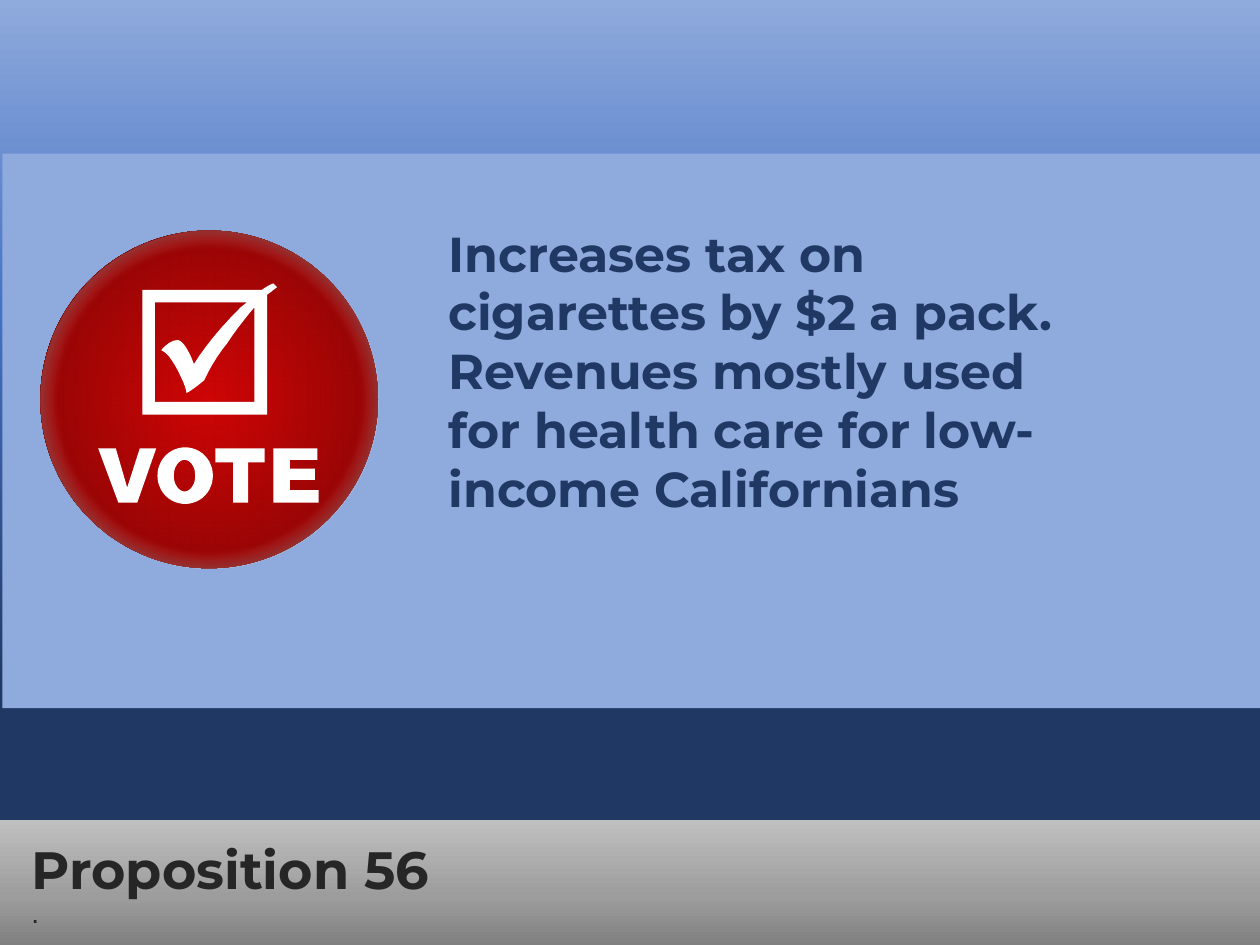
import math

import pptx
import pptx.util
import pptx.dml.color
import pptx.enum.shapes
import pptx.enum.text
import pptx.oxml
import pptx.oxml.ns

RGB = pptx.dml.color.RGBColor
KIND = pptx.enum.shapes.MSO_SHAPE
WIDTH = pptx.util.Inches(10)
HEIGHT = pptx.util.Inches(7.5)
COL = WIDTH / 100
ROW = HEIGHT / 75
FINE = 100

NAVY = RGB(0x20, 0x38, 0x64)
BLUE = RGB(0x44, 0x72, 0xC4)
SKY = RGB(0x8F, 0xAA, 0xDC)
INK = RGB(0x26, 0x26, 0x26)
PALE = RGB(0xF2, 0xF2, 0xF2)
SILVER = RGB(0xBF, 0xBF, 0xBF)
STEEL = RGB(0x9D, 0x9D, 0x9D)
GREY = RGB(0x80, 0x80, 0x80)
RED = RGB(0xCC, 0x00, 0x00)
BRICK = RGB(0x99, 0x00, 0x00)
WINE = RGB(0x66, 0x00, 0x00)
WHITE = RGB(0xFF, 0xFF, 0xFF)

LINEAR = '<a:lin ang="5400000" scaled="0"/>'
ROUND = ('<a:path path="circle"><a:fillToRect l="50000" t="50000" '
         'r="50000" b="50000"/></a:path>')
BADGE = (3.2, 18.3, 26.8, 26.8)


def cells(left, top, width, height):
    return [int(n) for n in (left * COL, top * ROW, width * COL, height * ROW)]


def blend(fill, node, stops, way=LINEAR):
    fill.gradient()
    grad = node.xpath(".//a:gradFill")[0]
    grad.clear()
    marks = "".join(
        f'<a:gs pos="{pos * 1000}"><a:srgbClr val="{color}">'
        f'<a:alpha val="{alpha * 1000}"/></a:srgbClr></a:gs>'
        for pos, color, alpha in stops)
    space = pptx.oxml.ns.nsdecls("a")
    root = pptx.oxml.parse_xml(
        f'<a:gradFill {space}><a:gsLst>{marks}</a:gsLst>{way}</a:gradFill>')
    grad.extend(list(root))


def add_block(shapes, kind, box):
    block = shapes.add_shape(kind, *cells(*box))
    block.shadow.inherit = False
    block.line.fill.background()
    return block


def add_disc(shapes, stops):
    disc = add_block(shapes, KIND.OVAL, BADGE)
    blend(disc.fill, disc.element, stops, ROUND)


def flatten(steps):
    points = []
    for step in steps:
        if len(step) == 2:
            points.append(step)
            continue
        knots = [points[-1], step[:2], step[2:4], step[4:]]
        for i in range(1, 13):
            t = i / 12
            share = ((1 - t) ** 3, 3 * t * (1 - t) ** 2, 3 * t * t * (1 - t), t ** 3)
            points.append(tuple(sum(s * k[axis] for s, k in zip(share, knots))
                                for axis in (0, 1)))
    return points


def oval(x, y, wide, tall):
    turns = [math.tau * i / 48 for i in range(48)]
    return [(x + wide * math.cos(a), y + tall * math.sin(a)) for a in turns]


def add_mark(shapes, *loops):
    first, *rest = [[(x * FINE, y * FINE) for x, y in flatten(loop)] for loop in loops]
    pen = shapes.build_freeform(*first[0], scale=(COL / FINE, ROW / FINE))
    pen.add_line_segments(first[1:], close=True)
    for loop in rest:
        pen.move_to(*loop[0])
        pen.add_line_segments(loop[1:], close=True)
    mark = pen.convert_to_shape()
    mark.shadow.inherit = False
    mark.fill.solid()
    mark.fill.fore_color.rgb = WHITE
    mark.line.fill.background()


def write(shape, text, box, size, face, color, bold):
    shape.left, shape.top, shape.width, shape.height = cells(*box)
    frame = shape.text_frame
    frame.text = text
    frame.word_wrap = True
    frame.auto_size = pptx.enum.text.MSO_AUTO_SIZE.NONE
    frame.vertical_anchor = pptx.enum.text.MSO_ANCHOR.TOP
    para = frame.paragraphs[0]
    para.alignment = pptx.enum.text.PP_ALIGN.LEFT
    para.space_before = pptx.util.Pt(0)
    font = para.font
    font.name, font.size, font.bold = face, pptx.util.Pt(size), bold
    font.color.rgb = color
    return para


def drop_bullet(para):
    props = para._p.get_or_add_pPr()
    props.set("marL", "0")
    props.set("indent", "0")
    space = pptx.oxml.ns.nsdecls("a")
    none = pptx.oxml.parse_xml(f"<a:buNone {space}/>")
    props.insert_element_before(none, "a:tabLst", "a:defRPr", "a:extLst")


def add_badge(slide):
    shapes = slide.shapes.add_group_shape().shapes
    add_disc(shapes, [(0, RED, 100), (66, BRICK, 100), (76, WINE, 100)])
    add_mark(shapes, [(7.8, 35.6), (9.2, 35.6), (10.1, 38.7), (11.1, 35.6),
                      (12.4, 35.6), (10.9, 39.9), (9.4, 39.9)])
    add_mark(shapes, oval(14.7, 37.75, 2.2, 2.25), oval(14.65, 37.75, 0.85, 1.25))
    add_mark(shapes, [(17.1, 35.6), (21, 35.6), (21, 36.7), (19.7, 36.7),
                      (19.7, 39.9), (18.5, 39.9), (18.5, 36.7), (17.1, 36.7)])
    add_mark(shapes, [(21.7, 35.6), (25.2, 35.6), (25.2, 36.5), (23, 36.5),
                      (23, 37.2), (25, 37.2), (25, 38.1), (23, 38.1),
                      (23, 38.9), (25.3, 38.9), (25.3, 39.9), (21.7, 39.9)])
    frame = [(21.2, 32.9), (11.3, 32.9), (11.3, 23), (20.8, 23),
             (21.1, 22.8, 21.4, 22.6, 21.7, 22.5), (22, 22.8),
             (21.7, 23, 21.5, 23.2, 21.2, 23.4)]
    tick = [(20.2, 24.4), (19.5, 25.2, 18.8, 26.1, 18, 27.3),
            (17.1, 28.4, 16.6, 29.4, 16.2, 30.2), (15.7, 30.6),
            (15.3, 30.9, 15, 31.1, 14.8, 31.2),
            (14.8, 31, 14.7, 30.7, 14.5, 30.2), (14.3, 29.8),
            (14, 29.1, 13.7, 28.7, 13.5, 28.4),
            (13.3, 28.1, 13, 27.9, 12.8, 27.8),
            (13.2, 27.3, 13.7, 27, 14.1, 27),
            (14.4, 27, 14.8, 27.5, 15.2, 28.4), (15.4, 28.9),
            (16.2, 27.6, 17.4, 26.1, 19.1, 24.4), (19.6, 24),
            (12.3, 24), (12.3, 31.9), (20.2, 31.9)]
    add_mark(shapes, frame, tick)
    add_disc(shapes, [(63, PALE, 1), (100, SILVER, 100)])


def main():
    deck = pptx.Presentation()
    deck.slide_width, deck.slide_height = WIDTH, HEIGHT
    slide = deck.slides.add_slide(deck.slide_layouts[1])
    shapes = slide.shapes
    title, body = shapes.title, slide.placeholders[1]
    blend(slide.background.fill, slide.element,
          [(0, SKY, 100), (33, BLUE, 100), (73, NAVY, 100)])

    strip = add_block(shapes, KIND.RECTANGLE, (0, 65.1, 100, 9.9))
    blend(strip.fill, strip.element,
          [(0, SILVER, 100), (61, STEEL, 100), (100, GREY, 100)])
    box = (1.5, 70.6, 60, 3.7)
    write(shapes.add_textbox(*cells(*box)), ".", box, 16, "Arial", INK, False)
    shapes.element.append(title.element)
    write(title, "Proposition 56", (1.5, 65.9, 98.7, 6.1),
          30, "Montserrat", INK, True)

    panel = add_block(shapes, KIND.RECTANGLE, (0.2, 12.2, 100, 44))
    panel.fill.solid()
    panel.fill.fore_color.rgb = SKY
    shapes.element.append(body.element)
    para = write(body, "Increases tax on cigarettes by $2 a pack. Revenues mostly "
                 "used for health care for low-income Californians",
                 (34.6, 17.2, 54.3, 24.6), 28, "Montserrat", NAVY, True)
    drop_bullet(para)
    add_badge(slide)
    deck.save("out.pptx")


if __name__ == "__main__":
    main()
